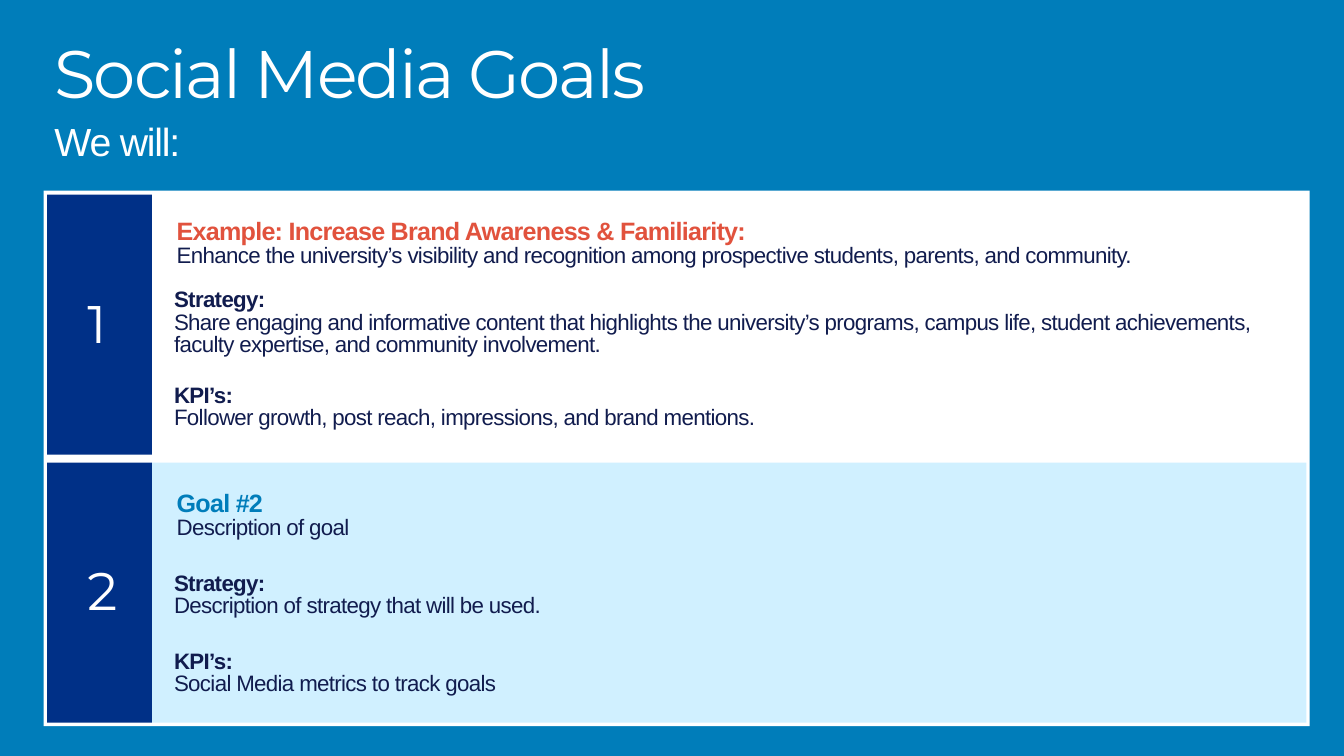
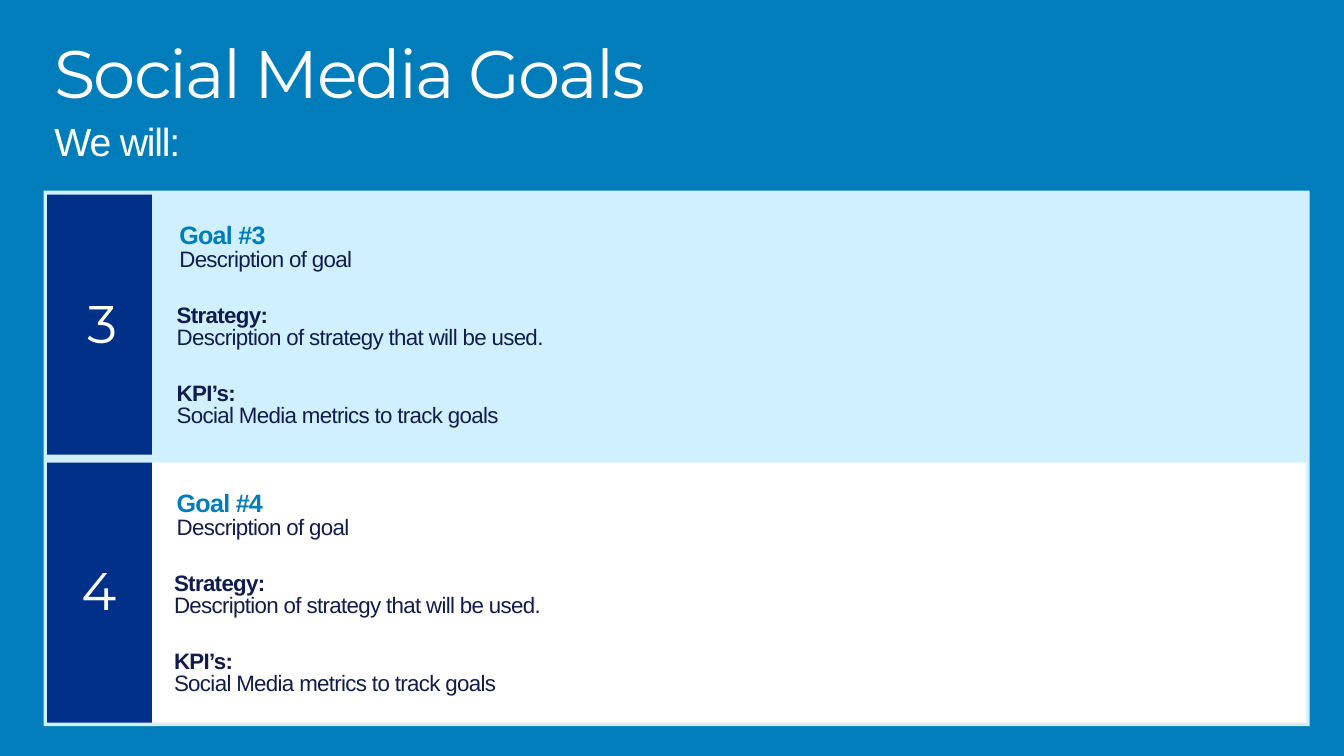
import dataclasses

import pptx
import pptx.dml.color
import pptx.enum.shapes
import pptx.enum.text
import pptx.util

Cm = pptx.util.Cm


@dataclasses.dataclass(frozen=True)
class TextStyle:
    size: float
    tracking: float
    color: str
    font: str = "Arial"
    bold: bool = False


class Theme:
    blue = "007DBA"
    navy = "003087"
    ink = "111C4E"
    coral = "E1523D"
    ice = "D0F0FF"
    white = "FFFFFF"

    title = TextStyle(72, -2.1, white, "Montserrat")
    subtitle = TextStyle(42, -1.3, white)
    number = TextStyle(56.6, -1.7, white, "Montserrat")
    goal = TextStyle(26.9, -0.8, blue, bold=True)
    example = dataclasses.replace(goal, color=coral)
    body = TextStyle(23.9, -0.7, ink)
    label = dataclasses.replace(body, bold=True)


@dataclasses.dataclass(frozen=True)
class Box:
    left: float
    top: float
    width: float
    height: float

    def inner(self, left, top, width, height):
        """Return a box whose corner is measured from this box's corner."""
        return Box(self.left + left, self.top + top, width, height)

    def lengths(self):
        return [Cm(value) for value in dataclasses.astuple(self)]


@dataclasses.dataclass(frozen=True)
class Goal:
    number: str
    name: str
    description: str = "Description of goal"
    strategy: str = "Description of strategy that will be used."
    measures: str = "Social Media metrics to track goals"
    name_style: TextStyle = Theme.goal
    text_left: float = 4.8
    text_tops: tuple = (1.12, 4.19, 7.14)
    number_left: float = 1.52


PAGE = Box(0, 0, 50.8, 28.58)
PANEL = Box(1.65, 7.21, 47.85, 20.24)
ROW_HEIGHT = 9.83
ROW_STEP = 10.13
NUMBER_WIDTH = 3.96
DETAIL_WIDTH = 43.64

SLIDES = [
    (Theme.white, Theme.ice, [
        Goal(
            "1",
            "Example: Increase Brand Awareness & Familiarity:",
            "Enhance the university’s visibility and recognition among "
            "prospective students, parents, and community.",
            "Share engaging and informative content that highlights the "
            "university’s programs, campus life, student achievements, "
            "faculty expertise, and community involvement.",
            "Follower growth, post reach, impressions, and brand mentions.",
            name_style=Theme.example,
            text_tops=(0.97, 3.61, 7.21),
        ),
        Goal("2", "Goal #2"),
    ]),
    (Theme.ice, Theme.white, [
        Goal("3", "Goal #3", text_left=4.9),
        Goal("4", "Goal #4", number_left=1.3),
    ]),
]


def rgb(color):
    return pptx.dml.color.RGBColor.from_string(color)


def add_block(page, box, color):
    block = page.shapes.add_shape(
        pptx.enum.shapes.MSO_SHAPE.RECTANGLE, *box.lengths())
    block.shadow.inherit = False
    block.fill.solid()
    block.fill.fore_color.rgb = rgb(color)
    block.line.fill.background()


def add_text(page, box, *lines):
    """Write (text, style) lines, one paragraph each, without margins."""
    frame = page.shapes.add_textbox(*box.lengths()).text_frame
    frame.margin_left = frame.margin_right = 0
    frame.margin_top = frame.margin_bottom = 0
    frame.word_wrap = True
    frame.auto_size = pptx.enum.text.MSO_AUTO_SIZE.SHAPE_TO_FIT_TEXT
    frame.text = "\n".join(text for text, style in lines)
    for para, (text, style) in zip(frame.paragraphs, lines):
        para.line_spacing = pptx.util.Pt(style.size)
        for span in para.runs:
            span.font.name = style.font
            span.font.size = pptx.util.Pt(style.size)
            span.font.bold = style.bold
            span.font.color.rgb = rgb(style.color)
            properties = span._r.get_or_add_rPr()
            properties.set("spc", str(round(style.tracking * 100)))


def add_header(page, box):
    add_text(page, box.inner(2.06, 1.7, 35.28, 2.67),
             ("Social Media Goals", Theme.title))
    add_text(page, box.inner(2.06, 4.72, 6.1, 1.5),
             ("We will:", Theme.subtitle))


def add_goal(page, box, goal):
    add_block(page, box.inner(0, 0, NUMBER_WIDTH, box.height), Theme.navy)
    add_text(page, box.inner(goal.number_left, 4.01, 0.91, 2.11),
             (goal.number, Theme.number))

    name_top, strategy_top, measures_top = goal.text_tops
    add_text(page, box.inner(goal.text_left + 0.1, name_top, 42.2, 1.83),
             (goal.name, goal.name_style), (goal.description, Theme.body))
    add_text(page, box.inner(goal.text_left, strategy_top, 41.45, 1.7),
             ("Strategy:", Theme.label), (goal.strategy, Theme.body))
    add_text(page, box.inner(goal.text_left, measures_top, 40.06, 1.7),
             ("KPI’s:", Theme.label), (goal.measures, Theme.body))


def add_goals_panel(page, box, panel_color, band_color, goals):
    """Stack the goals; the last one lies on a band of its own colour."""
    add_block(page, box, panel_color)
    rows = [
        box.inner(0.13, 0.15 + index * ROW_STEP,
                  NUMBER_WIDTH + DETAIL_WIDTH, ROW_HEIGHT)
        for index in range(len(goals))
    ]
    add_block(page, rows[-1].inner(NUMBER_WIDTH, 0, DETAIL_WIDTH, ROW_HEIGHT),
              band_color)
    for row, goal in zip(rows, goals):
        add_goal(page, row, goal)


def add_goals_slide(deck, panel_color, band_color, goals):
    page = deck.slides.add_slide(deck.slide_layouts[6])
    page.background.fill.solid()
    page.background.fill.fore_color.rgb = rgb(Theme.blue)
    add_header(page, PAGE)
    add_goals_panel(page, PANEL, panel_color, band_color, goals)


def main():
    deck = pptx.Presentation()
    deck.slide_width = Cm(PAGE.width)
    deck.slide_height = Cm(PAGE.height)
    for panel_color, band_color, goals in SLIDES:
        add_goals_slide(deck, panel_color, band_color, goals)
    deck.save("out.pptx")


if __name__ == "__main__":
    main()
